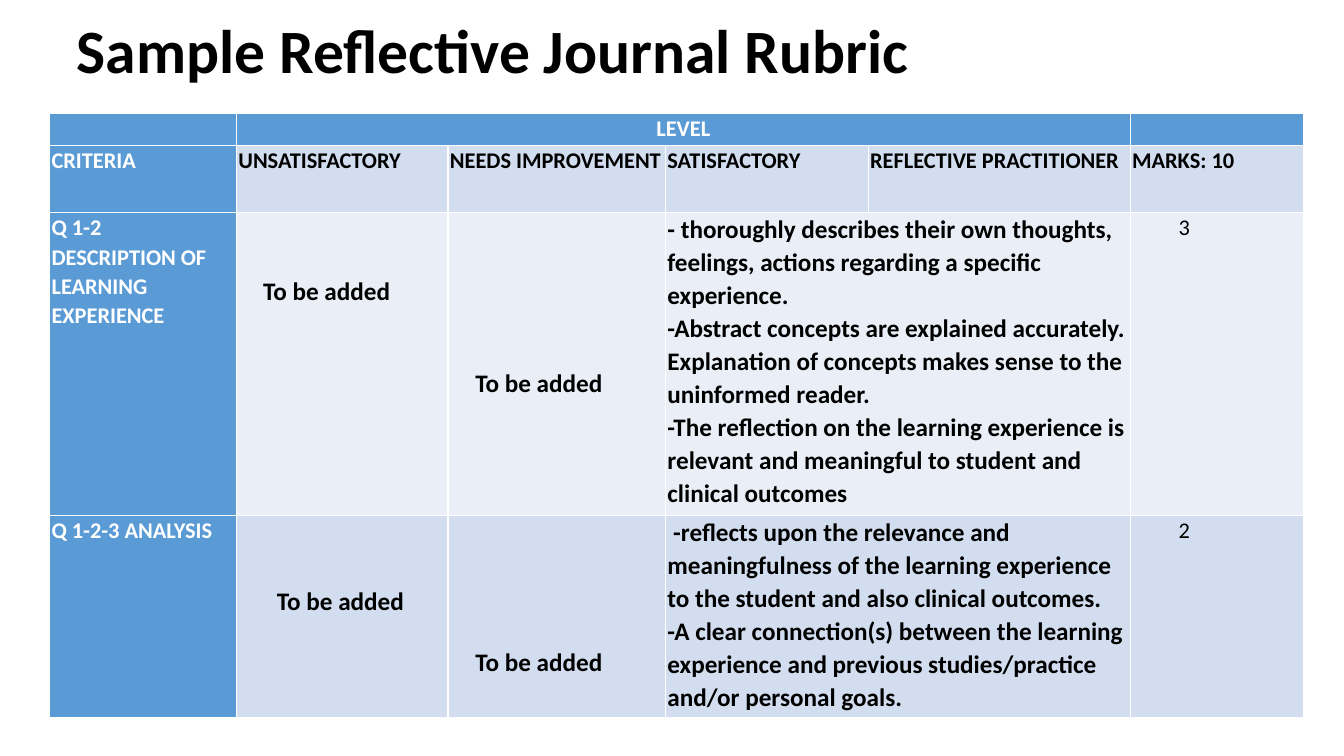
import pptx
import pptx.util
import pptx.dml.color
import pptx.enum.text
from dataclasses import dataclass
from pptx.util import Cm, Pt


@dataclass(frozen=True)
class Theme:
    font: str = "Calibri"
    ink: str = "000000"
    paper: str = "FFFFFF"
    accent: str = "5B9BD5"
    band_dark: str = "D2DEEF"
    band_light: str = "EAEFF7"
    title_size: int = 44
    body_size: int = 18
    label_size: int = 16


theme = Theme()
align = pptx.enum.text.PP_ALIGN


def rgb(code):
    return pptx.dml.color.RGBColor.from_string(code)


def write(frame, lines, size, color=theme.ink, bold=True, spacing=None, alignment=align.LEFT):
    """Fill a text frame with one paragraph per line, all in one style."""
    for index, line in enumerate(lines):
        para = frame.add_paragraph() if index else frame.paragraphs[0]
        para.text = line
        para.alignment = alignment
        para.line_spacing = spacing
        para.font.name = theme.font
        para.font.size = Pt(size)
        para.font.bold = bold
        para.font.color.rgb = rgb(color)


deck = pptx.Presentation()
deck.slide_width, deck.slide_height = Cm(33.87), Cm(19.05)
page = deck.slides.add_slide(deck.slide_layouts[5])

# Rubric table
column_widths = [4.71, 5.33, 5.48, 5.11, 6.6, 4.36]
row_heights = [0.81, 1.7, 7.63, 5.08]
row_fills = [theme.accent, theme.band_dark, theme.band_light, theme.band_dark]
rubric = [
    [[], ["LEVEL"], [], [], [], []],
    [["CRITERIA"], ["UNSATISFACTORY"], ["NEEDS IMPROVEMENT"], ["SATISFACTORY"],
     ["REFLECTIVE PRACTITIONER"], ["MARKS: 10"]],
    [["Q 1-2\vDESCRIPTION OF LEARNING EXPERIENCE"], [], [],
     ["- thoroughly describes their own thoughts, feelings, actions regarding a specific experience.",
      "-Abstract concepts are explained accurately. Explanation of concepts makes sense to the "
      "uninformed reader.",
      "-The reflection on the learning experience is relevant and meaningful to student and "
      "clinical outcomes"],
     [], ["3"]],
    [["Q 1-2-3 ANALYSIS"], [], [],
     [" -reflects upon the relevance and meaningfulness of the learning experience to the student "
      "and also clinical outcomes.",
      "-A clear connection(s) between the learning experience and previous studies/practice "
      "and/or personal goals."],
     [], ["2"]],
]

table = page.shapes.add_table(
    len(row_heights), len(column_widths), Cm(1.25), Cm(2.85),
    Cm(sum(column_widths)), Cm(sum(row_heights))).table
for column, width in zip(table.columns, column_widths):
    column.width = Cm(width)
for row, height in zip(table.rows, row_heights):
    row.height = Cm(height)

table.cell(0, 1).merge(table.cell(0, 4))
for row_index in (2, 3):
    table.cell(row_index, 3).merge(table.cell(row_index, 4))

for row_index, row_texts in enumerate(rubric):
    for column_index, lines in enumerate(row_texts):
        cell = table.cell(row_index, column_index)
        is_heading = row_index == 0 or column_index == 0
        is_body = row_index >= 2
        is_mark = is_body and column_index == 5
        is_description = is_body and column_index == 3
        cell.fill.solid()
        cell.fill.fore_color.rgb = rgb(theme.accent if is_heading else row_fills[row_index])
        cell.margin_left = Cm(1.22 if is_mark else 0.05)
        cell.margin_right = Cm(0.05)
        cell.margin_top = cell.margin_bottom = 0
        write(cell.text_frame, lines,
              theme.body_size if is_description else theme.label_size,
              theme.paper if is_heading else theme.ink,
              bold=not is_mark, spacing=1.07,
              alignment=align.CENTER if row_index == 0 else align.LEFT)

# Title
title = page.shapes.title
title.left, title.top, title.width, title.height = Cm(1.68), Cm(-0.5), Cm(29.21), Cm(3.68)
title.text_frame.vertical_anchor = pptx.enum.text.MSO_ANCHOR.MIDDLE
write(title.text_frame, ["Sample Reflective Journal Rubric"], theme.title_size, spacing=0.9)

# Placeholder notes over the empty cells
for left, top in [(6.38, 6.81), (11.73, 9.14), (6.73, 14.63), (11.73, 16.15)]:
    box = page.shapes.add_textbox(Cm(left), Cm(top), Cm(4.22), Cm(1.02))
    box.text_frame.word_wrap = True
    box.text_frame.auto_size = pptx.enum.text.MSO_AUTO_SIZE.SHAPE_TO_FIT_TEXT
    write(box.text_frame, ["To be added"], theme.body_size)

deck.save("out.pptx")
